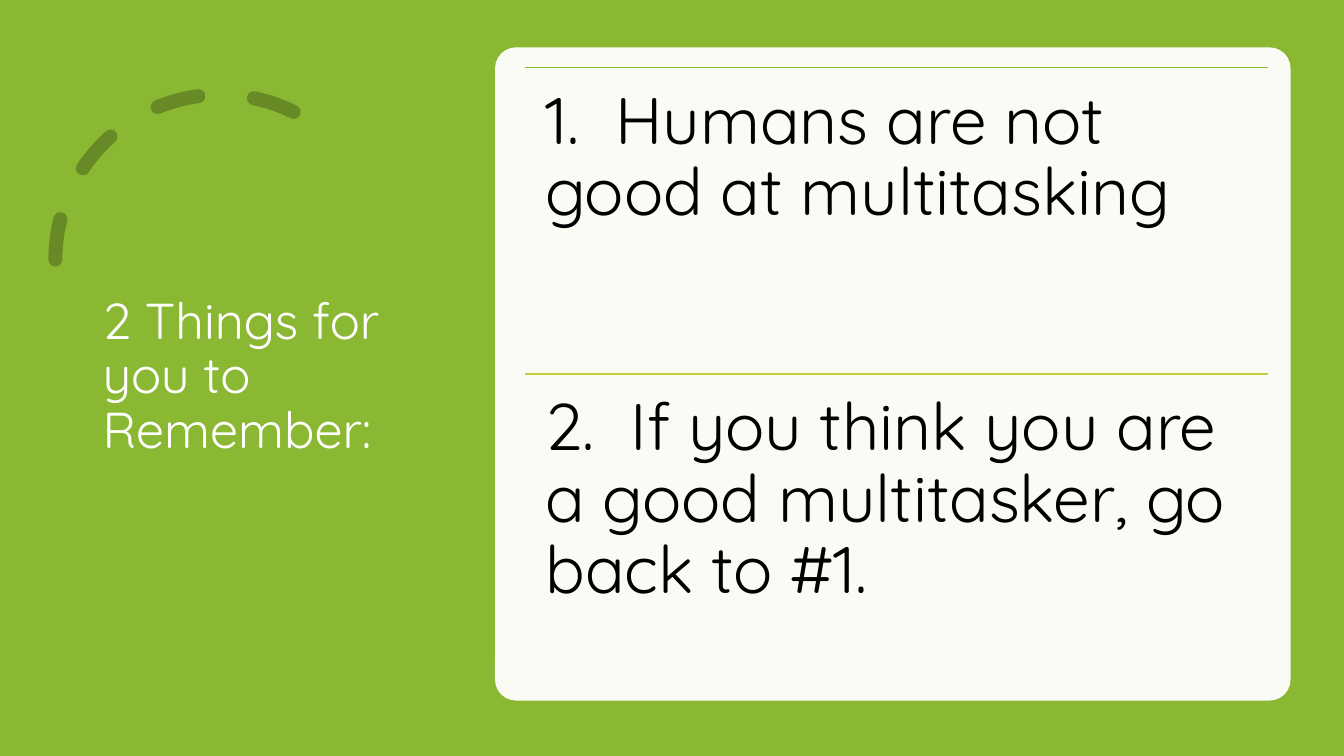
from lxml.etree import SubElement
from pptx import Presentation
from pptx.dml.color import RGBColor
from pptx.enum.dml import MSO_LINE_DASH_STYLE as Dash
from pptx.enum.shapes import MSO_CONNECTOR as Connector, MSO_SHAPE as Shape
from pptx.enum.text import MSO_ANCHOR as Anchor
from pptx.oxml.ns import qn
from pptx.util import Inches, Pt

GREEN = RGBColor(0x8A, 0xB8, 0x33)
DARK_GREEN = RGBColor(0x67, 0x8A, 0x26)
LIME = RGBColor(0xC0, 0xCF, 0x3A)
WHITE = RGBColor(0xFF, 0xFF, 0xFF)
BLACK = RGBColor(0x00, 0x00, 0x00)

deck = Presentation()
deck.slide_width, deck.slide_height = Inches(13.33), Inches(7.5)
slide = deck.slides.add_slide(deck.slide_layouts[6])
shapes = slide.shapes


def add_text(words, box, inset, anchor, font_format):
    frame = shapes.add_textbox(*map(Inches, box)).text_frame
    frame.word_wrap = True
    frame.vertical_anchor = anchor
    for side in ("left", "right", "top", "bottom"):
        setattr(frame, f"margin_{side}", Inches(inset))
    paragraph = frame.paragraphs[0]
    paragraph.line_spacing = 0.9
    run = paragraph.add_run()
    run.text = words
    run.font.color.rgb = font_format["color"]
    for key in ("name", "size"):
        setattr(run.font, key, font_format[key])


# Green background
slide.background.fill.solid()
slide.background.fill.fore_color.rgb = GREEN

# Dashed arc above the title
arc = shapes.add_shape(Shape.ARC, Inches(0.55), Inches(0.94), Inches(3.27), Inches(3.27))
arc.shadow.inherit = False
arc.adjustments[0], arc.adjustments[1] = 146.129, 0
arc._element.spPr.find(qn("a:xfrm")).set("flipH", "1")
arc.fill.background()
arc.line.color.rgb = DARK_GREEN
arc.line.width = Pt(10)
arc.line.dash_style = Dash.DASH
arc.line._get_or_add_ln().set("cap", "rnd")

# Title
title_format = {"name": "Quicksand", "size": Pt(36), "color": WHITE}
add_text("2 Things for you to Remember:", (0.92, 0.7, 3.23, 6.09), 0.1,
         Anchor.MIDDLE, title_format)

# Nearly opaque white card
card = shapes.add_shape(Shape.ROUNDED_RECTANGLE, Inches(4.91), Inches(0.47),
                        Inches(7.89), Inches(6.48))
card.shadow.inherit = False
card.adjustments[0] = 0.032
card.line.fill.background()
card.fill.solid()
card.fill.fore_color.rgb = WHITE
card_color = card._element.spPr.find(qn("a:solidFill"))[0]
SubElement(card_color, qn("a:alpha"), val="95000")

# Two equal rows, each with a rule on top
LEFT, TOP, ROW_WIDTH, ROW_HEIGHT = 5.21, 0.67, 7.37, 3.04
reminder_format = {"name": "Quicksand", "size": Pt(47), "color": BLACK}
reminders = [
    ("1.  Humans are not good at multitasking", GREEN),
    ("2.  If you think you are a good multitasker, go back to #1.", LIME),
]
for row, (reminder, rule_color) in enumerate(reminders):
    top = TOP + row * ROW_HEIGHT
    rule = shapes.add_connector(Connector.STRAIGHT, Inches(LEFT), Inches(top),
                                Inches(LEFT + ROW_WIDTH), Inches(top))
    rule.line.color.rgb = rule_color
    rule.line.width = Pt(1)
    SubElement(rule._element.spPr, qn("a:effectLst"))
    add_text(reminder, (LEFT, top, ROW_WIDTH, ROW_HEIGHT), 0.2,
             Anchor.TOP, reminder_format)

deck.save("out.pptx")
